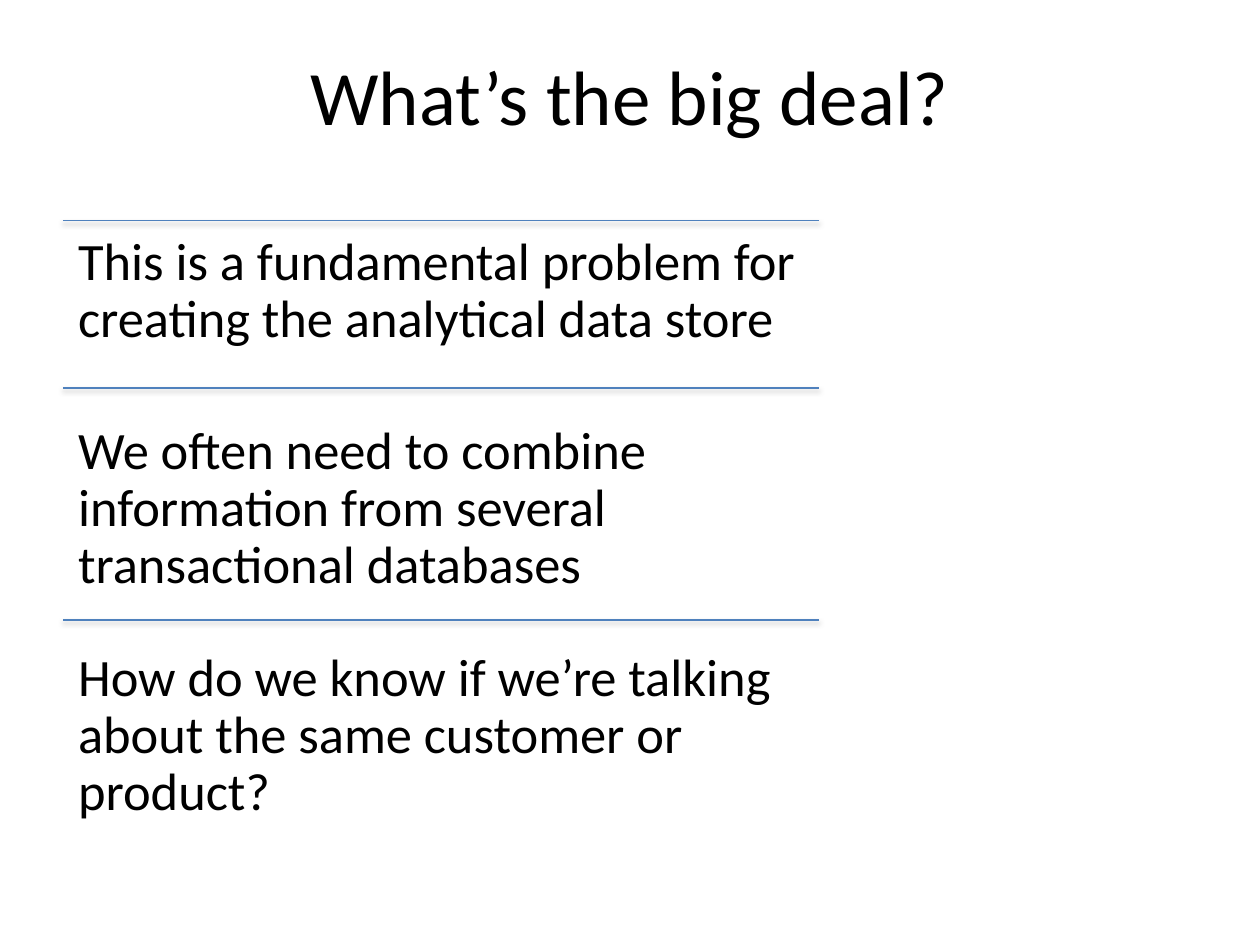
from typing import NamedTuple

from lxml.etree import SubElement
from pptx import Presentation
from pptx.dml.color import RGBColor
from pptx.enum.shapes import MSO_CONNECTOR
from pptx.enum.text import MSO_ANCHOR, PP_ALIGN
from pptx.oxml.ns import qn
from pptx.util import Inches, Pt

BLACK = RGBColor(0x00, 0x00, 0x00)
BLUE = RGBColor(0x4F, 0x81, 0xBD)
FONT = "Calibri"
LEFT, WIDTH, HEIGHT = Inches(0.5), Inches(6), Inches(1.65)
INSET = Inches(0.12)


class Point(NamedTuple):
    rule: float  # top of the line, in inches
    top: float  # top of the text, in inches
    text: str


POINTS = [
    Point(1.75, 1.75, "This is a fundamental problem for creating the analytical data store"),
    Point(3.08, 3.25, "We often need to combine information from several transactional databases"),
    Point(4.92, 5.05, "How do we know if we’re talking about the same customer or product?"),
]


def set_font(para, size: int) -> None:
    para.font.name = FONT
    para.font.size = Pt(size)
    para.font.color.rgb = BLACK


def add_shadow(line) -> None:
    effects = SubElement(line._element.spPr, qn("a:effectLst"))
    shadow = SubElement(effects, qn("a:outerShdw"), blurRad=str(Pt(3.1)),
                        dist=str(Pt(1.6)), dir="5400000", rotWithShape="0")
    color = SubElement(shadow, qn("a:srgbClr"), val=str(BLACK))
    SubElement(color, qn("a:alpha"), val="38000")


def add_point(shapes, point: Point) -> None:
    # Rule above the text
    y = Inches(point.rule)
    line = shapes.add_connector(MSO_CONNECTOR.STRAIGHT, LEFT, y, LEFT + WIDTH, y)
    line.line.color.rgb = BLUE
    line.line.width = Pt(0.75)
    add_shadow(line)

    # Text
    frame = shapes.add_textbox(LEFT, Inches(point.top), WIDTH, HEIGHT).text_frame
    frame.word_wrap = True
    frame.vertical_anchor = MSO_ANCHOR.TOP
    frame.margin_left = frame.margin_right = INSET
    frame.margin_top = frame.margin_bottom = INSET
    para = frame.paragraphs[0]
    para.text = point.text
    para.line_spacing = 0.9
    para.space_after = Pt(10.5)
    set_font(para, 30)


def main() -> None:
    deck = Presentation()
    deck.slide_width, deck.slide_height = Inches(10), Inches(7.5)
    slide = deck.slides.add_slide(deck.slide_layouts[5])

    # Title
    title = slide.shapes.title
    title.left, title.top = Inches(0.5), Inches(0.25)
    title.width, title.height = Inches(9), Inches(1)
    title.text_frame.vertical_anchor = MSO_ANCHOR.MIDDLE
    head = title.text_frame.paragraphs[0]
    head.text = "What’s the big deal?"
    head.alignment = PP_ALIGN.CENTER
    set_font(head, 44)

    # List of points
    group = slide.shapes.add_group_shape()
    for point in POINTS:
        add_point(group.shapes, point)

    deck.save("out.pptx")


if __name__ == "__main__":
    main()
